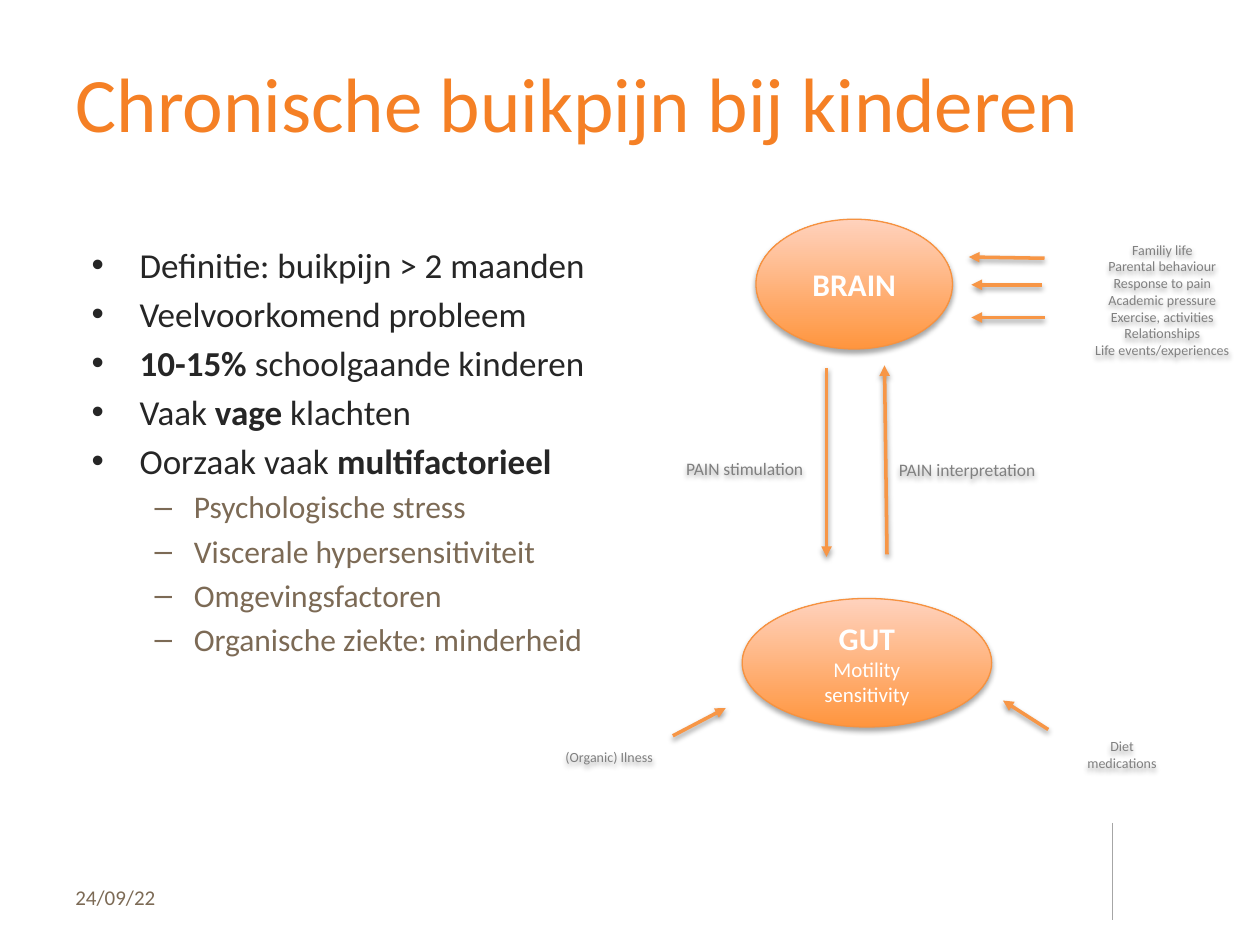
import pptx
import pptx.util
import pptx.dml.color
import pptx.enum.shapes
import pptx.enum.text
import pptx.oxml
import pptx.oxml.ns
import lxml.etree

Inches = pptx.util.Inches
Pt = pptx.util.Pt
RGB = pptx.dml.color.RGBColor.from_string
ALIGN = pptx.enum.text.PP_ALIGN
MIDDLE = pptx.enum.text.MSO_ANCHOR.MIDDLE
qn = pptx.oxml.ns.qn

COLORS = {
    "title": "F58025", "text": "262626", "brown": "7C6A55", "label": "808080",
    "white": "FFFFFF", "arrow": "F79646", "outline": "F69240",
    "dark": "FF953E", "light": "FFD2BD", "rule": "A6A6A6",
}


def add_effects(s, opacity=None):
    shadow = "" if opacity is None else (
        '<a:outerShdw blurRad="39370" dist="22860" dir="5400000" rotWithShape="0">'
        f'<a:srgbClr val="000000"><a:alpha val="{opacity * 1000}"/></a:srgbClr></a:outerShdw>')
    s._element.spPr.append(pptx.oxml.parse_xml(
        f'<a:effectLst {pptx.oxml.ns.nsdecls("a")}>{shadow}</a:effectLst>'))


def write(tf, lines, color, align=ALIGN.LEFT):
    tf.word_wrap = True
    tf.vertical_anchor = MIDDLE
    for i, (text, size, bold) in enumerate(lines):
        p = tf.paragraphs[0] if i == 0 else tf.add_paragraph()
        p.text = text
        p.alignment = align
        font = p.runs[0].font
        font.name = "Calibri"
        font.size = Pt(size)
        font.bold = bold
        font.color.rgb = RGB(COLORS[color])


prs = pptx.Presentation()
prs.slide_width = Inches(10)
prs.slide_height = Inches(7.5)
slide = prs.slides.add_slide(prs.slide_layouts[5])

title = slide.shapes.title
title.left, title.top = Inches(0.5), Inches(0.18)
title.width, title.height = Inches(9), Inches(1.25)
write(title.text_frame, [("Chronische buikpijn bij kinderen", 44, False)], "title")

bullets = [
    (0, [("Definitie: buikpijn > 2 maanden", False)]),
    (0, [("Veelvoorkomend probleem", False)]),
    (0, [("10-15% ", True), ("schoolgaande kinderen", False)]),
    (0, [("Vaak ", False), ("vage ", True), ("klachten", False)]),
    (0, [("Oorzaak vaak ", False), ("multifactorieel", True)]),
    (1, [("Psychologische stress", False)]),
    (1, [("Viscerale hypersensitiviteit", False)]),
    (1, [("Omgevingsfactoren", False)]),
    (1, [("Organische ziekte: minderheid", False)]),
]
levels = [(0.38, -0.38, "•", 20, "text"), (0.81, -0.31, "–", 18, "brown")]
body = slide.shapes.add_textbox(Inches(0.63), Inches(1.88), Inches(9), Inches(3.21))
tf = body.text_frame
tf.word_wrap = True
for i, (level, parts) in enumerate(bullets):
    margin, indent, mark, size, color = levels[level]
    p = tf.paragraphs[0] if i == 0 else tf.add_paragraph()
    p.level = level
    pPr = p._p.get_or_add_pPr()
    pPr.set("marL", str(Inches(margin)))
    pPr.set("indent", str(Inches(indent)))
    lxml.etree.SubElement(pPr, qn("a:buFont")).set("typeface", "Arial")
    lxml.etree.SubElement(pPr, qn("a:buChar")).set("char", mark)
    if i:
        p.space_before = Pt(size * 0.2)
    for text, bold in parts:
        r = p.add_run()
        r.text = text
        r.font.name = "Calibri"
        r.font.size = Pt(size)
        r.font.bold = bold
        r.font.color.rgb = RGB(COLORS[color])

date = slide.shapes.add_textbox(Inches(0.5), Inches(6.92), Inches(2.33), Inches(0.4))
write(date.text_frame, [("24/09/22", 12, False)], "brown")

ellipses = [
    (6, 1.74, 1.56, 1.03, [("BRAIN", 18, True)]),
    (5.89, 4.75, 1.98, 1.02,
     [("GUT", 18, True), ("Motility", 12, False), ("sensitivity", 12, False)]),
]
for x, y, w, h, lines in ellipses:
    s = slide.shapes.add_shape(pptx.enum.shapes.MSO_SHAPE.OVAL,
                               Inches(x), Inches(y), Inches(w), Inches(h))
    s.fill.gradient()
    s.fill.gradient_angle = 90
    for stop, color, position in zip(s.fill.gradient_stops, ("dark", "light"), (0, 1)):
        stop.color.rgb = RGB(COLORS[color])
        stop.position = position
    s.line.color.rgb = RGB(COLORS["outline"])
    s.line.width = Pt(0.75)
    add_effects(s, 35)
    write(s.text_frame, lines, "white", ALIGN.CENTER)

lines = [
    (8.83, 6.53, 8.83, 7.3, "rule"),
    (6.56, 2.92, 6.56, 4.42, "arrow"),
    (7.04, 4.4, 7.02, 2.9, "arrow"),
    (5.34, 5.84, 5.76, 5.62, "arrow"),
    (8.32, 5.79, 7.96, 5.56, "arrow"),
    (8.29, 2.05, 7.69, 2.04, "arrow"),
    (8.27, 2.26, 7.71, 2.26, "arrow"),
    (8.29, 2.52, 7.71, 2.52, "arrow"),
]
for x1, y1, x2, y2, kind in lines:
    s = slide.shapes.add_connector(pptx.enum.shapes.MSO_CONNECTOR.STRAIGHT,
                                   Inches(x1), Inches(y1), Inches(x2), Inches(y2))
    s.line.color.rgb = RGB(COLORS[kind])
    if kind == "arrow":
        s.line.width = Pt(2)
        ln = s.line._get_or_add_ln()
        lxml.etree.SubElement(ln, qn("a:tailEnd")).set("type", "triangle")
        add_effects(s, 38)
    else:
        s.line.width = Pt(0.75)
        add_effects(s)

labels = [
    (7.03, 3.5, 1.29, 0.45, 10, ["PAIN interpretation"]),
    (5.34, 3.49, 1.14, 0.45, 10, ["PAIN stimulation"]),
    (8.4, 5.79, 1.01, 0.4, 8, ["Diet", "medications"]),
    (4.33, 5.81, 1.01, 0.4, 8, ["(Organic) Ilness"]),
    (8.5, 1.65, 1.45, 1.46, 8,
     ["Familiy life", "Parental behaviour", "Response to pain", "Academic pressure",
      "Exercise, activities", "Relationships", "Life events/experiences"]),
]
for x, y, w, h, size, texts in labels:
    s = slide.shapes.add_textbox(Inches(x), Inches(y), Inches(w), Inches(h))
    add_effects(s, 35)
    write(s.text_frame, [(text, size, False) for text in texts], "label", ALIGN.CENTER)

prs.save("out.pptx")
